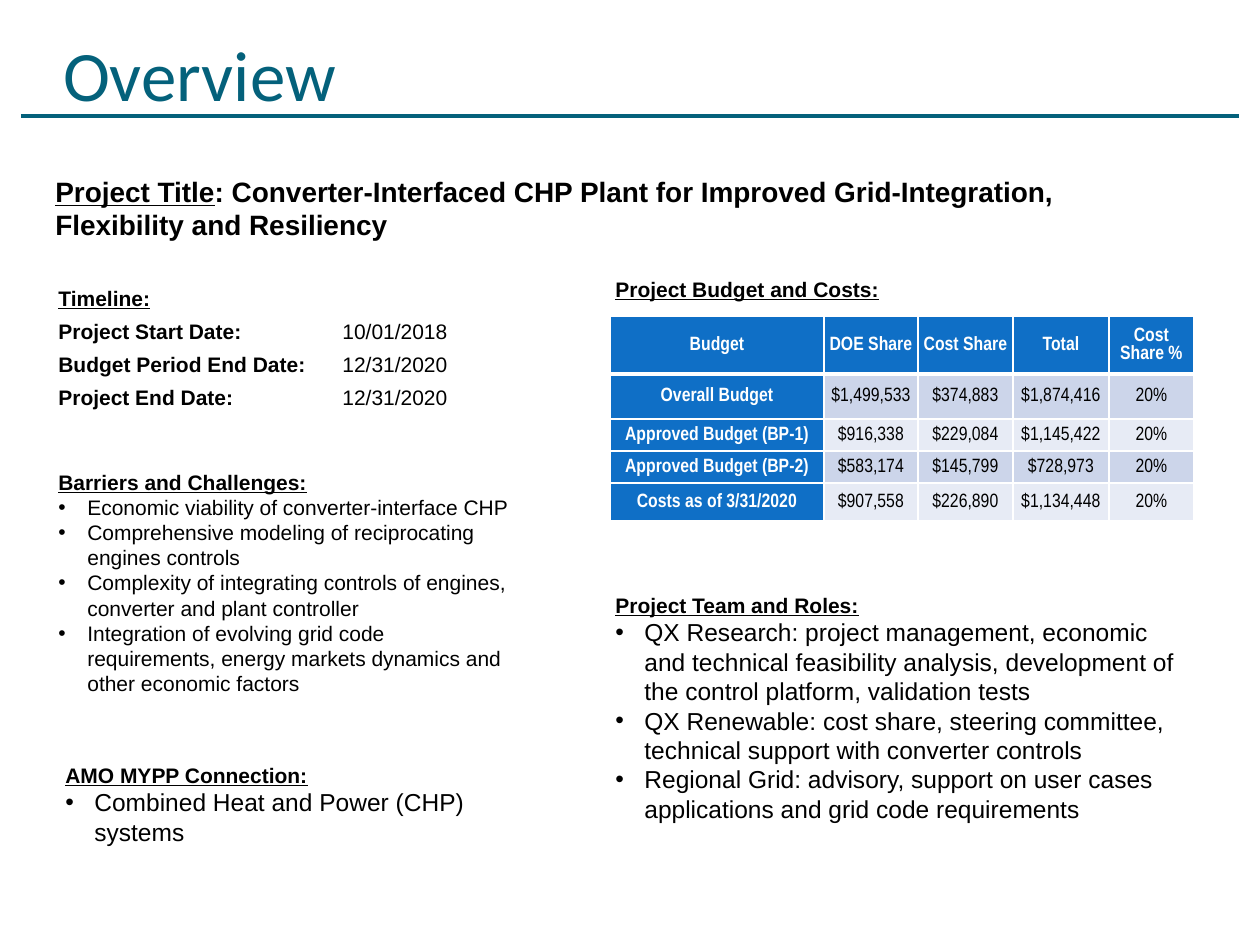
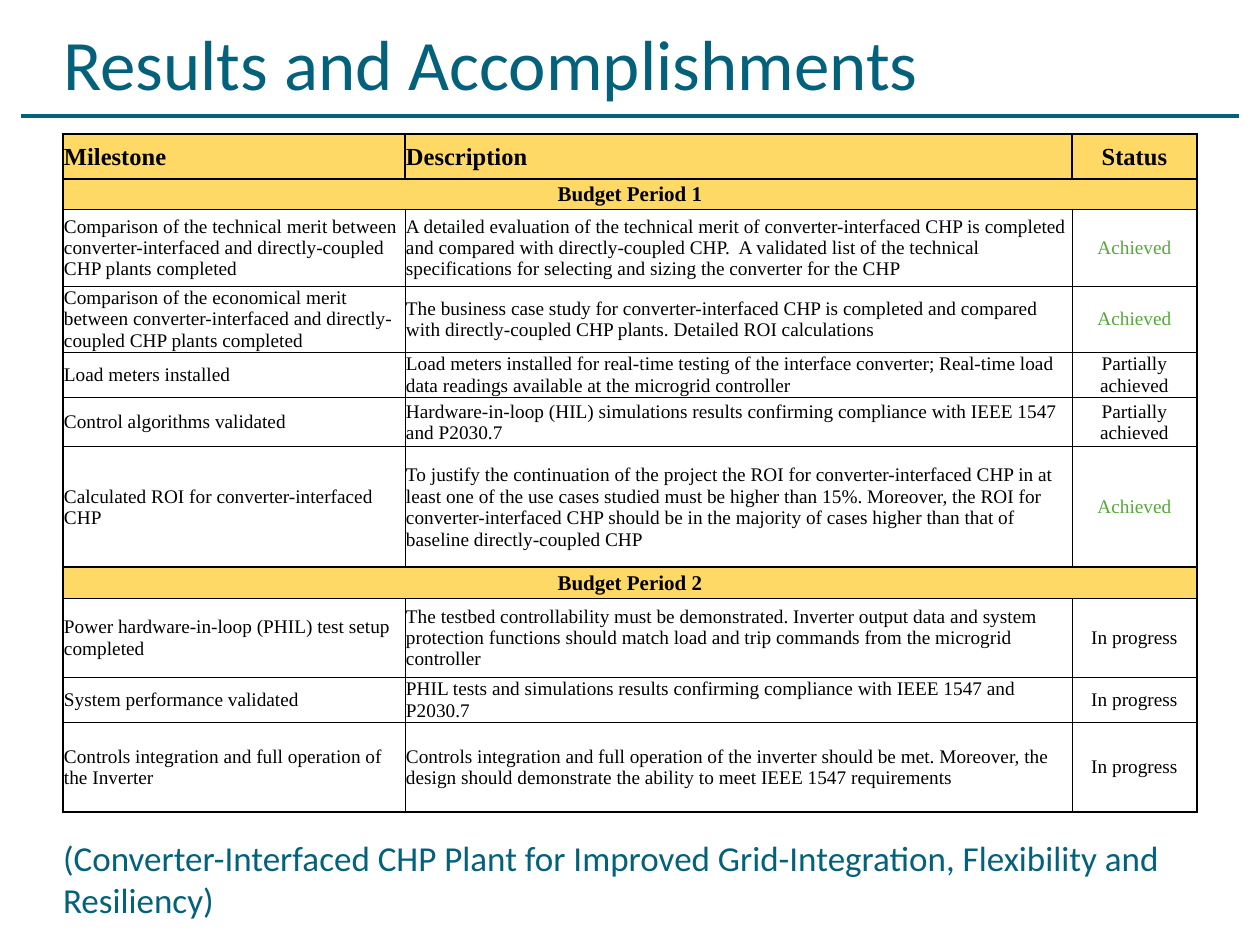
from lxml import etree
from pptx import Presentation
from pptx.dml.color import RGBColor
from pptx.enum.shapes import MSO_CONNECTOR
from pptx.enum.text import MSO_ANCHOR, MSO_AUTO_SIZE, PP_ALIGN
from pptx.oxml.ns import qn
from pptx.util import Pt

PX = 914400 / 126
LEFT, CENTER = PP_ALIGN.LEFT, PP_ALIGN.CENTER
MIDDLE, BOTTOM = MSO_ANCHOR.MIDDLE, MSO_ANCHOR.BOTTOM
NO_AUTOFIT = MSO_AUTO_SIZE.NONE
STRAIGHT = MSO_CONNECTOR.STRAIGHT

TEAL = RGBColor(0x04, 0x61, 0x7B)
BLUE = RGBColor(0x0F, 0x6F, 0xC6)
BLUE_BAND = RGBColor(0xCC, 0xD5, 0xEA)
PALE_BAND = RGBColor(0xE7, 0xEB, 0xF5)
GOLD = RGBColor(0xFF, 0xD9, 0x66)
GREEN = RGBColor(0x55, 0xA8, 0x39)
BLACK = RGBColor(0, 0, 0)
WHITE = RGBColor(255, 255, 255)


def add_section(slide, box, heading, bullets=(), heading_size=12, bullet_size=12):
    shape = slide.shapes.add_textbox(*[round(value * PX) for value in box])
    frame = shape.text_frame
    frame.word_wrap = True
    run = frame.paragraphs[0].add_run()
    run.text = heading
    run.font.underline = True
    font = frame.paragraphs[0].font
    font.name, font.size, font.bold, font.color.rgb = "Arial", Pt(heading_size), True, BLACK
    for bullet in bullets:
        paragraph = frame.add_paragraph()
        paragraph.text = bullet
        properties = paragraph._p.get_or_add_pPr()
        properties.set("marL", str(round(29 * PX)))
        properties.set("indent", str(round(-29 * PX)))
        etree.SubElement(properties, qn("a:buFont")).set("typeface", "Arial")
        etree.SubElement(properties, qn("a:buChar")).set("char", "•")
        font = paragraph.font
        font.name, font.size, font.color.rgb = "Arial", Pt(bullet_size), BLACK
    return frame


def format_cell(cell, text, font_name, size, color, bold, fill, alignment, margins, line_color, widths):
    cell.text = text
    cell.vertical_anchor = MIDDLE
    cell.margin_left, cell.margin_top, cell.margin_right, cell.margin_bottom = [
        round(margin * PX) for margin in margins]
    paragraph = cell.text_frame.paragraphs[0]
    paragraph.alignment = alignment
    font = paragraph.font
    font.name, font.size, font.bold, font.color.rgb = font_name, Pt(size), bold, color
    properties = cell._tc.get_or_add_tcPr()
    for side, width in zip("LRTB", widths):
        line = etree.SubElement(properties, qn(f"a:ln{side}"), w=str(Pt(width)))
        line_fill = etree.SubElement(line, qn("a:solidFill"))
        etree.SubElement(line_fill, qn("a:srgbClr"), val=str(line_color))
    cell.fill.solid()
    cell.fill.fore_color.rgb = fill


presentation = Presentation()
presentation.slide_width = round(1260 * PX)
presentation.slide_height = round(945 * PX)
layout = presentation.slide_layouts[5]

slides = []
for title_text, title_box in [
    ("Overview", (63, 84, 850, 32)),
    ("Results and Accomplishments", (63, 21, 924, 84)),
]:
    slide = presentation.slides.add_slide(layout)
    slides.append(slide)
    title = slide.shapes.title
    title.left, title.top, title.width, title.height = [round(value * PX) for value in title_box]
    frame = title.text_frame
    frame.text = title_text
    frame.auto_size = NO_AUTOFIT
    frame.vertical_anchor = BOTTOM
    frame.margin_left = frame.margin_right = frame.margin_bottom = 0
    frame.margin_top = round(6 * PX)
    paragraph = frame.paragraphs[0]
    paragraph.alignment = LEFT
    font = paragraph.font
    font.name, font.size, font.color.rgb = "Calibri", Pt(40.5), TEAL
    title_rule = slide.shapes.add_connector(
        STRAIGHT, *[round(value * PX) for value in (21, 116, 1239, 116)])
    title_rule.line.color.rgb = TEAL
    title_rule.line.width = Pt(2.25)
    etree.SubElement(title_rule._element.spPr, qn("a:effectLst"))

overview, results = slides

project_title = add_section(overview, (43, 168, 1152, 81), "Project Title", heading_size=16)
run = project_title.paragraphs[0].add_run()
run.text = ": Converter-Interfaced CHP Plant for Improved Grid-Integration, Flexibility and Resiliency"

timeline = add_section(overview, (46, 279, 449, 141), "Timeline:")
timeline.paragraphs[0].space_after = Pt(4.5)
for label, date in [
    ("Project Start Date:", "10/01/2018"),
    ("Budget Period End Date:", "12/31/2020"),
    ("Project End Date:", "12/31/2020"),
]:
    paragraph = timeline.add_paragraph()
    paragraph.space_after = Pt(4.5)
    tabs = etree.SubElement(paragraph._p.get_or_add_pPr(), qn("a:tabLst"))
    etree.SubElement(tabs, qn("a:tab"), pos=str(round(284 * PX)), algn="l")
    font = paragraph.font
    font.name, font.size, font.color.rgb = "Arial", Pt(12), BLACK
    for text, bold in [(label, True), ("\t" + date, False)]:
        run = paragraph.add_run()
        run.text = text
        run.font.bold = bold

add_section(overview, (46, 463, 479, 261), "Barriers and Challenges:", [
    "Economic viability of converter-interface CHP",
    "Comprehensive modeling of reciprocating engines controls",
    "Complexity of integrating controls of engines, converter and plant controller",
    "Integration of evolving grid code requirements, energy markets dynamics and other economic factors",
])
add_section(overview, (53, 756, 426, 97), "AMO MYPP Connection:",
            ["Combined Heat and Power (CHP) systems"], bullet_size=14)
add_section(overview, (603, 270, 339, 38), "Project Budget and Costs:")
add_section(overview, (603, 586, 591, 246), "Project Team and Roles:", [
    "QX Research: project management, economic and technical feasibility analysis, "
    "development of the control platform, validation tests",
    "QX Renewable: cost share, steering committee, technical support with converter controls",
    "Regional Grid: advisory, support on user cases applications and grid code requirements",
], bullet_size=14)

budget_rows = [
    (58, ["Budget", "DOE Share", "Cost Share", "Total", "Cost Share %"]),
    (45, ["Overall Budget", "$1,499,533", "$374,883", "$1,874,416", "20%"]),
    (32, ["Approved Budget (BP-1)", "$916,338", "$229,084", "$1,145,422", "20%"]),
    (32, ["Approved Budget (BP-2)", "$583,174", "$145,799", "$728,973", "20%"]),
    (38, ["Costs as of 3/31/2020", "$907,558", "$226,890", "$1,134,448", "20%"]),
]
budget_table = overview.shapes.add_table(
    5, 5, *[round(value * PX) for value in (610, 316, 584, 205)]).table
for column, width in zip(budget_table.columns, (214, 94, 95, 96, 85)):
    column.width = round(width * PX)
for row_index, (height, texts) in enumerate(budget_rows):
    budget_table.rows[row_index].height = round(height * PX)
    for column_index, text in enumerate(texts):
        heading = row_index == 0 or column_index == 0
        band = BLUE_BAND if row_index % 2 else PALE_BAND
        widths = (1, 1, 3 if row_index == 1 else 1, 3 if row_index == 0 else 1)
        format_cell(budget_table.cell(row_index, column_index), text, "Arial Narrow", 11,
                    WHITE if heading else BLACK, heading, BLUE if heading else band,
                    CENTER, (5, 0, 5, 0), WHITE, widths)

milestone_tables = [
    (134, [
        (45, ["Milestone", "Description", "Status"]),
        (30, ["Budget Period 1"]),
        (77, ["Comparison of the technical merit between converter-interfaced and "
              "directly-coupled CHP plants completed",
              "A detailed evaluation of the technical merit of converter-interfaced CHP is completed "
              "and compared with directly-coupled CHP.  A validated list of the technical "
              "specifications for selecting and sizing the converter for the CHP",
              "Achieved"]),
        (66, ["Comparison of the economical merit between converter-interfaced and "
              "directly-coupled CHP plants completed",
              "The business case study for converter-interfaced CHP is completed and compared "
              "with directly-coupled CHP plants. Detailed ROI calculations",
              "Achieved"]),
        (45, ["Load meters installed",
              "Load meters installed for real-time testing of the interface converter; "
              "Real-time load data readings available at the microgrid controller",
              "Partially achieved"]),
        (50, ["Control algorithms validated",
              "Hardware-in-loop (HIL) simulations results confirming compliance with "
              "IEEE 1547 and P2030.7",
              "Partially achieved"]),
        (120, ["Calculated ROI for converter-interfaced CHP",
               "To justify the continuation of the project the ROI for converter-interfaced CHP in at "
               "least one of the use cases studied must be higher than 15%. Moreover, the ROI for "
               "converter-interfaced CHP should be in the majority of cases higher than that of "
               "baseline directly-coupled CHP",
               "Achieved"]),
    ]),
    (567, [
        (31, ["Budget Period 2"]),
        (79, ["Power hardware-in-loop (PHIL) test setup completed",
              "The testbed controllability must be demonstrated. Inverter output data and system "
              "protection functions should match load and trip commands from the microgrid controller",
              "In progress"]),
        (45, ["System performance validated",
              "PHIL tests and simulations results confirming compliance with IEEE 1547 and P2030.7",
              "In progress"]),
        (90, ["Controls integration and full operation of the Inverter",
              "Controls integration and full operation of the inverter should be met. Moreover, the "
              "design should demonstrate the ability to meet IEEE 1547 requirements",
              "In progress"]),
    ]),
]
for top, rows in milestone_tables:
    total_height = sum(height for height, texts in rows)
    table = results.shapes.add_table(
        len(rows), 3, *[round(value * PX) for value in (63, top, 1134, total_height)]).table
    for column, width in zip(table.columns, (342, 667, 125)):
        column.width = round(width * PX)
    for row_index, (height, texts) in enumerate(rows):
        table.rows[row_index].height = round(height * PX)
        header = texts[0] == "Milestone"
        period = len(texts) == 1
        closing = texts[0].startswith("Controls integration")
        if period:
            table.cell(row_index, 0).merge(table.cell(row_index, 2))
            texts = texts + ["", ""]
        for column_index, text in enumerate(texts):
            widths = (1 if header or column_index == 0 else 0.5,
                      1 if header or period or column_index == 2 else 0.5,
                      1 if header or period else 0.5,
                      1 if header or closing else 0.5)
            format_cell(table.cell(row_index, column_index), text, "Times New Roman",
                        14 if header else 12 if period else 11,
                        GREEN if text == "Achieved" else BLACK, header or period,
                        GOLD if header or period else WHITE,
                        CENTER if period or column_index == 2 else LEFT,
                        (1, 1, 1, 0), BLACK, widths)

caption = results.shapes.add_textbox(*[round(value * PX) for value in (63, 830, 1189, 91)]).text_frame
caption.word_wrap = True
caption.vertical_anchor = BOTTOM
caption.margin_left = caption.margin_right = caption.margin_bottom = 0
caption.margin_top = round(6 * PX)
caption.text = "(Converter-Interfaced CHP Plant for Improved Grid-Integration, Flexibility and Resiliency)"
font = caption.paragraphs[0].font
font.name, font.size, font.color.rgb = "Calibri", Pt(20), TEAL

presentation.save("out.pptx")
